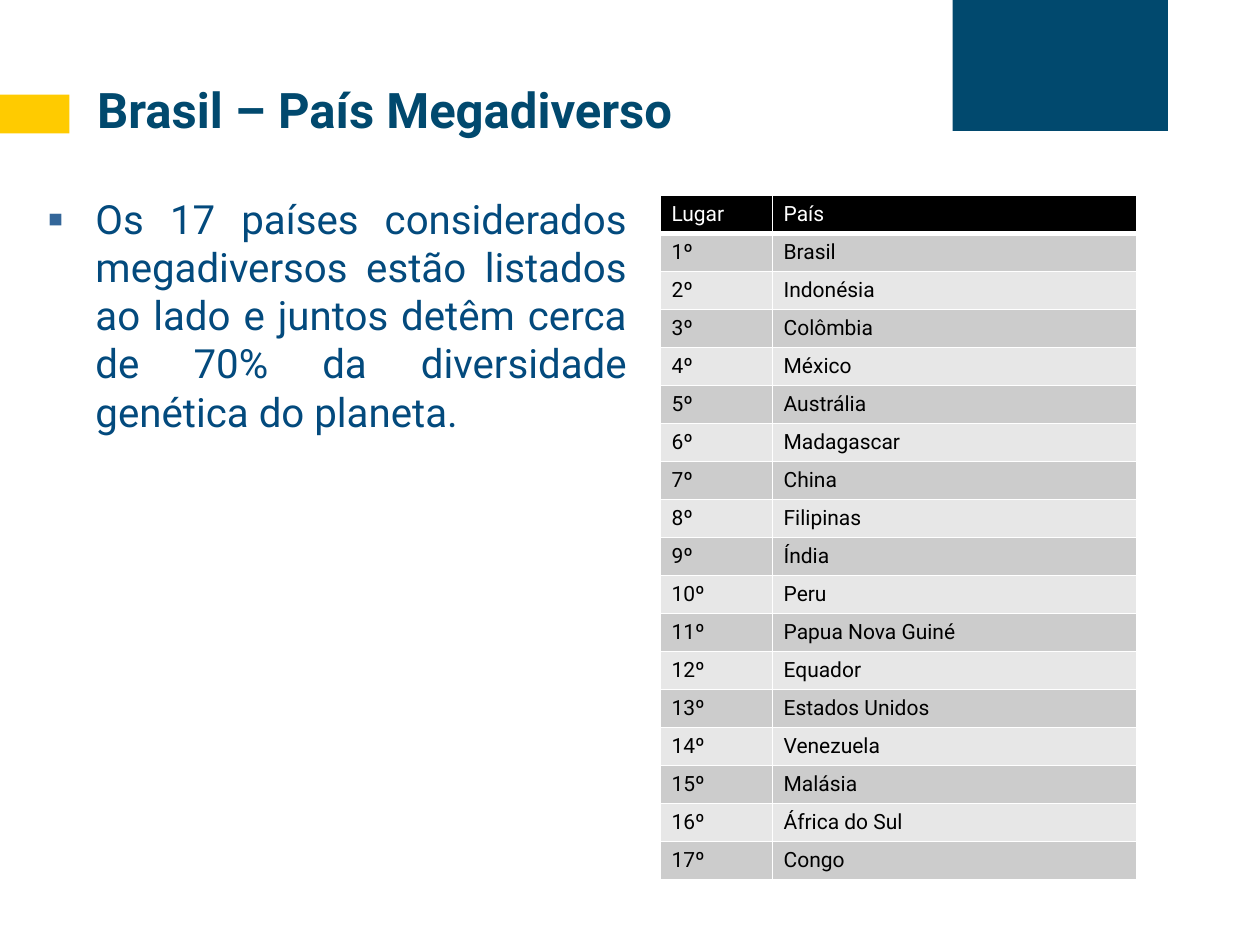
"""Build the slide listing the 17 megadiverse countries."""
from lxml.etree import SubElement
from pptx import Presentation
from pptx.dml.color import RGBColor
from pptx.enum.shapes import MSO_SHAPE
from pptx.enum.text import MSO_ANCHOR, PP_ALIGN
from pptx.oxml import parse_xml
from pptx.oxml.ns import nsdecls, qn
from pptx.util import Inches, Pt

NAVY = RGBColor(0x01, 0x49, 0x6E)
BLUE = RGBColor(0x03, 0x4A, 0x7D)
YELLOW = RGBColor(0xFF, 0xCB, 0x00)
BLACK = RGBColor(0x00, 0x00, 0x00)
WHITE = RGBColor(0xFF, 0xFF, 0xFF)
DARK_BAND = RGBColor(0xCC, 0xCC, 0xCC)
LIGHT_BAND = RGBColor(0xE7, 0xE7, 0xE7)
BULLET = RGBColor(0x33, 0x66, 0x99)
FONT = "Roboto"
COUNTRIES = [
    "Brasil", "Indonésia", "Colômbia", "México", "Austrália", "Madagascar",
    "China", "Filipinas", "Índia", "Peru", "Papua Nova Guiné", "Equador",
    "Estados Unidos", "Venezuela", "Malásia", "África do Sul", "Congo",
]

deck = Presentation()
deck.slide_width, deck.slide_height = Inches(10), Inches(7.5)
COLUMN, ROW = deck.slide_width / 100, deck.slide_height / 75
page = deck.slides.add_slide(deck.slide_layouts[5])


def area(left, top, width, height):
    """Turn grid columns and rows into a position and size."""
    return [int(n * unit) for n, unit in zip((left, top, width, height), (COLUMN, ROW) * 2)]


def style(paragraph, size, color, bold=False):
    """Format every run of a paragraph."""
    for span in paragraph.runs:
        span.font.name, span.font.size, span.font.bold = FONT, Pt(size), bold
        span.font.color.rgb = color


for place, color in (((0, 7.5, 5.5, 3.1), YELLOW), ((75.6, 0, 17.1, 10.4), NAVY)):
    block = page.shapes.add_shape(MSO_SHAPE.RECTANGLE, *area(*place))
    block.shadow.inherit = False
    block.fill.solid()
    block.fill.fore_color.rgb = color
    block.line.fill.background()

title = page.shapes.title
title.left, title.top, title.width, title.height = area(6.7, 5.8, 61.4, 5.7)
title.text_frame.text = "Brasil – País Megadiverso"
title.text_frame.vertical_anchor = MSO_ANCHOR.TOP
heading = title.text_frame.paragraphs[0]
heading.alignment = PP_ALIGN.LEFT
style(heading, 28, NAVY, bold=True)

body = page.shapes.add_textbox(*area(2.8, 14.9, 48, 36.2))
body.text_frame.word_wrap = True
body.text_frame.text = (
    "Os 17 países considerados megadiversos estão listados ao lado "
    "e juntos detêm cerca de 70% da diversidade genética do planeta."
)
para = body.text_frame.paragraphs[0]
para.alignment = PP_ALIGN.JUSTIFY
props = para._p.get_or_add_pPr()
props.set("marL", str(Inches(0.38)))
props.set("indent", str(-Inches(0.38)))
bullet_color = SubElement(props, qn("a:buClr"))
SubElement(bullet_color, qn("a:srgbClr"), val=str(BULLET))
SubElement(props, qn("a:buFont"), typeface=FONT)
SubElement(props, qn("a:buChar"), char="▪")
style(para, 23, BLUE)

entries = [("Lugar", "País")] + [(f"{rank}º", name) for rank, name in enumerate(COUNTRIES, 1)]
frame = page.shapes.add_table(len(entries), 2, *area(52.4, 15.5, 37.8, 54.3))
table = frame.table
for column, width in zip(table.columns, (8.9, 28.9)):
    column.width = int(width * COLUMN)
for index, entry in enumerate(entries):
    fill = BLACK if index == 0 else DARK_BAND if index % 2 else LIGHT_BAND
    for cell, text in zip(table.rows[index].cells, entry):
        cell.text_frame.text = text
        cell.margin_left = cell.margin_right = Inches(0.09)
        style(cell.text_frame.paragraphs[0], 12, BLACK if index else WHITE)
        cell.fill.solid()
        cell.fill.fore_color.rgb = fill
        for position, side in enumerate(("lnL", "lnR", "lnT", "lnB")):
            weight = Pt(3 if index == 0 and side == "lnB" else 1)
            cell._tc.get_or_add_tcPr().insert(position, parse_xml(
                f'<a:{side} {nsdecls("a")} w="{weight}"><a:solidFill>'
                f'<a:srgbClr val="{WHITE}"/></a:solidFill></a:{side}>'
            ))

deck.save("out.pptx")
